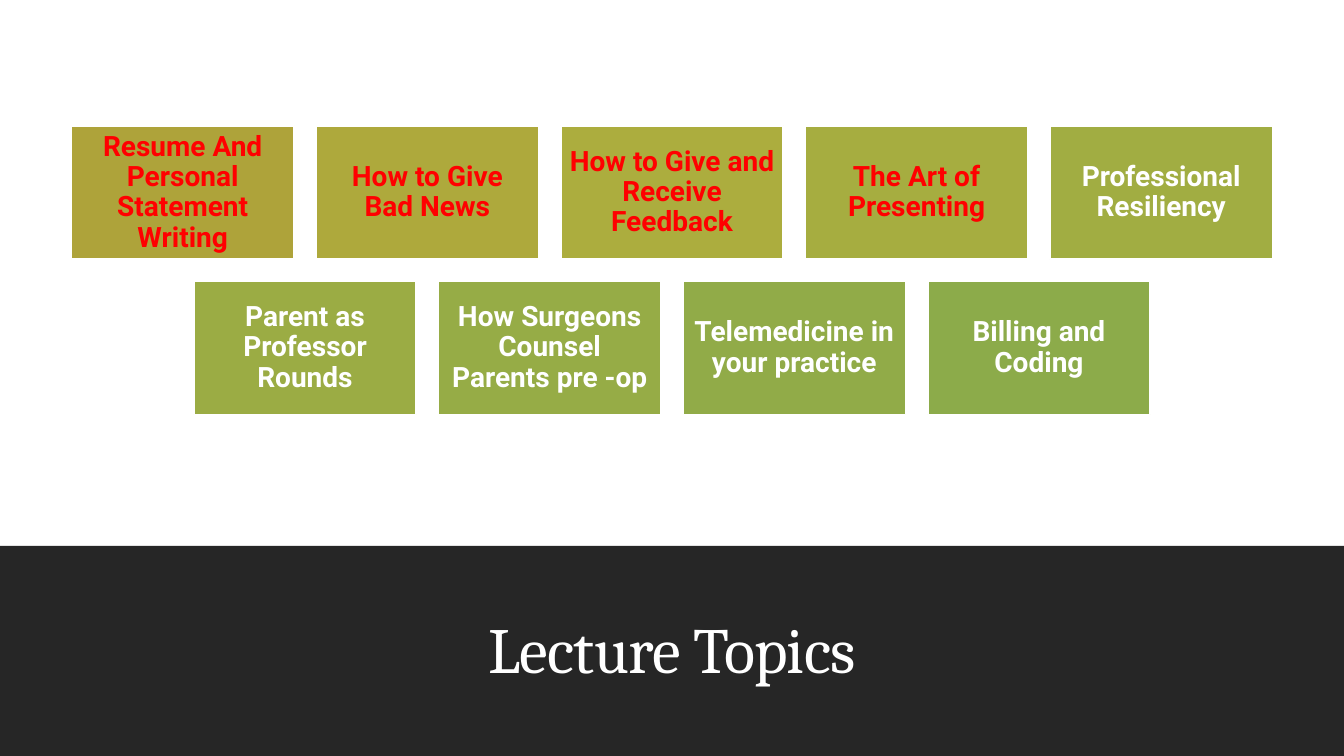
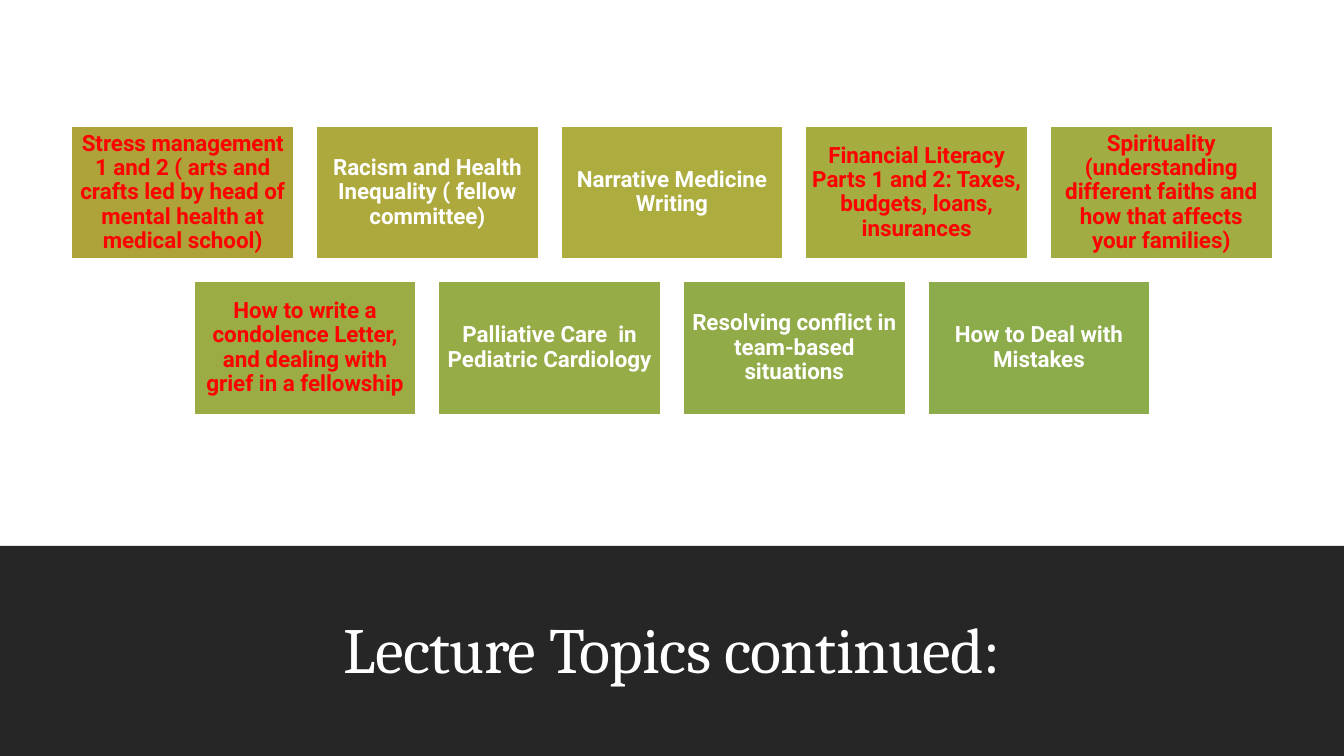
from pptx import Presentation
from pptx.dml.color import RGBColor
from pptx.enum.shapes import MSO_SHAPE
from pptx.enum.text import MSO_ANCHOR, PP_ALIGN
from pptx.util import Pt

COLORS = {
    "white": "FFFFFF", "band": "262626", "marked": "FF0000",
    "tile1": "AEA33A", "tile2": "AEA93C", "tile3": "ACAD3E",
    "tile4": "A6AD40", "tile5": "A1AD42", "tile6": "9BAC44",
    "tile7": "96AC46", "tile8": "91AB48", "tile9": "8CAB4A",
}
HEADING_FONT, BODY_FONT = "Cambria", "Roboto"
PAGE_WIDTH, PAGE_HEIGHT = 960, 540

# Regions: left, top, width, height
BAND = (0, 390, PAGE_WIDTH, 150)
TITLE = (84, 413.4, 792, 81.2)
GRID = (51, 90, 858, 206)
PER_ROW, TILE_GAP, TILE_HEIGHT = 5, 15.7, 95.2

# Each topic: wording, colour of its text
FIRST_TOPICS = [
    ("Resume And Personal Statement Writing", "marked"),
    ("How to Give Bad News", "marked"),
    ("How to Give and Receive Feedback", "marked"),
    ("The Art of Presenting", "marked"),
    ("Professional Resiliency", "white"),
    ("Parent as Professor Rounds", "white"),
    ("How Surgeons Counsel Parents pre -op", "white"),
    ("Telemedicine in your practice", "white"),
    ("Billing and Coding", "white"),
]
MORE_TOPICS = [
    ("Stress management 1 and 2 ( arts and crafts led by head of mental "
     "health at medical school)", "marked"),
    ("Racism and Health Inequality ( fellow committee)", "white"),
    ("Narrative Medicine Writing", "white"),
    ("Financial Literacy Parts 1 and 2: Taxes, budgets, loans, insurances",
     "marked"),
    ("Spirituality (understanding different faiths and how that affects "
     "your families)", "marked"),
    ("How to write a condolence Letter, and dealing with grief in a "
     "fellowship", "marked"),
    ("Palliative Care  in Pediatric Cardiology", "white"),
    ("Resolving conflict in team-based situations", "white"),
    ("How to Deal with Mistakes", "white"),
]


def color(name):
    return RGBColor.from_string(COLORS[name])


def add_text(shape, text, *, size, font, fill="white", bold=False,
             anchor=MSO_ANCHOR.MIDDLE, margins=(7.2, 3.6), tracking=0):
    frame = shape.text_frame
    frame.word_wrap = True
    frame.vertical_anchor = anchor
    frame.margin_left = frame.margin_right = Pt(margins[0])
    frame.margin_top = frame.margin_bottom = Pt(margins[1])
    para = frame.paragraphs[0]
    para.alignment = PP_ALIGN.CENTER
    para.line_spacing = 0.9
    span = para.add_run()
    span.text = text
    span.font.size = Pt(size)
    span.font.name = font
    span.font.bold = bold
    span.font.color.rgb = color(fill)
    if tracking:
        span.font._element.set("spc", str(round(tracking * 100)))


def add_rectangle(page, box, fill, outline=None):
    shape = page.shapes.add_shape(MSO_SHAPE.RECTANGLE, *map(Pt, box))
    shape.shadow.inherit = False
    shape.fill.solid()
    shape.fill.fore_color.rgb = color(fill)
    if outline:
        shape.line.color.rgb = color(outline)
        shape.line.width = Pt(1.25)
    else:
        shape.line.fill.background()
    return shape


def add_title_band(page, title):
    add_rectangle(page, BAND, "band")
    heading = page.shapes.add_textbox(*map(Pt, TITLE))
    add_text(heading, title, size=46, font=HEADING_FONT,
             anchor=MSO_ANCHOR.BOTTOM, tracking=-0.5)


def add_topic_grid(page, box, topics, size, margin):
    left, top, width, _ = box
    tile_width = (width - (PER_ROW - 1) * TILE_GAP) / PER_ROW
    for index, (topic, text_color) in enumerate(topics):
        row, column = divmod(index, PER_ROW)
        # A short row is centred in the grid
        in_row = min(PER_ROW, len(topics) - row * PER_ROW)
        step = column + (PER_ROW - in_row) / 2
        tile_box = (left + step * (tile_width + TILE_GAP),
                    top + row * (TILE_HEIGHT + TILE_GAP),
                    tile_width, TILE_HEIGHT)
        tile = add_rectangle(page, tile_box, f"tile{index + 1}", "white")
        add_text(tile, topic, size=size, font=BODY_FONT, fill=text_color,
                 bold=True, margins=(margin, margin))


def add_topics_page(deck, title, topics, size, margin):
    page = deck.slides.add_slide(deck.slide_layouts[6])
    page.background.fill.solid()
    page.background.fill.fore_color.rgb = color("white")
    add_title_band(page, title)
    add_topic_grid(page, GRID, topics, size, margin)


def main():
    deck = Presentation()
    deck.slide_width, deck.slide_height = Pt(PAGE_WIDTH), Pt(PAGE_HEIGHT)
    add_topics_page(deck, "Lecture Topics", FIRST_TOPICS, size=20, margin=6)
    add_topics_page(deck, "Lecture Topics continued:", MORE_TOPICS,
                    size=16, margin=4.8)
    deck.save("out.pptx")


if __name__ == "__main__":
    main()
